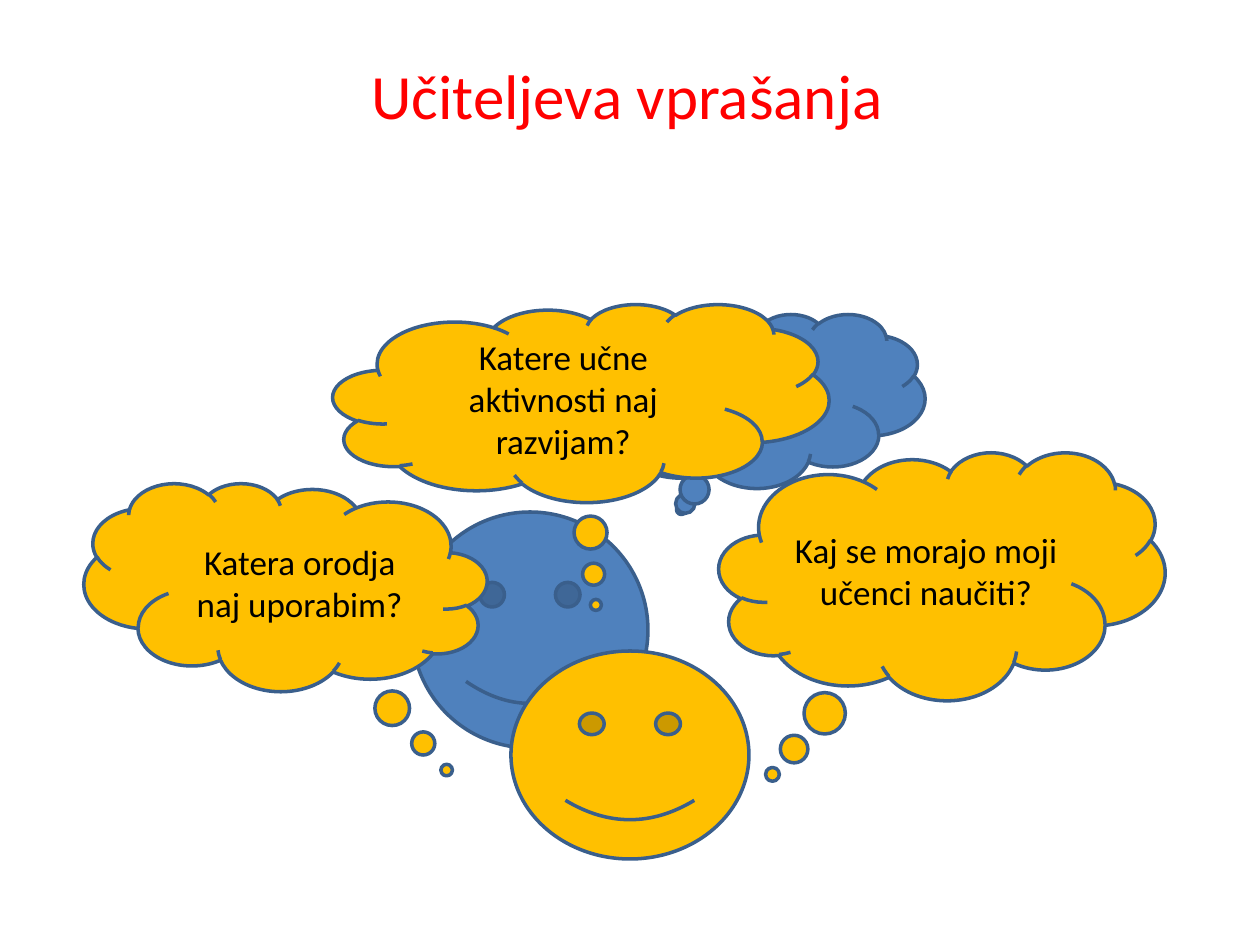
import dataclasses
import typing

import pptx
import pptx.dml.color
import pptx.enum.shapes
import pptx.enum.text
import pptx.util

EMU_PER_PX = 914400 / 126
FONT = "Calibri"
BLUE = "4F81BD"
OUTLINE = "3A5F8C"
YELLOW = "FFC000"
RED = "FF0000"
BLACK = "000000"
CLOUD = pptx.enum.shapes.MSO_SHAPE.CLOUD_CALLOUT
FACE = pptx.enum.shapes.MSO_SHAPE.SMILEY_FACE


@dataclasses.dataclass
class Figure:
    kind: typing.Any
    left: int
    top: int
    width: int
    height: int
    fill: str
    question: str = ""
    tail: tuple[float, ...] = ()
    mirrored: bool = False


FIGURES_BEHIND_TITLE = [
    Figure(CLOUD, 581, 314, 344, 174, BLUE),
    Figure(FACE, 412, 512, 236, 236, BLUE),
]
FIGURES_IN_FRONT = [
    Figure(FACE, 511, 651, 238, 208, YELLOW),
    Figure(CLOUD, 719, 452, 446, 248, YELLOW,
           "Kaj se morajo moji učenci naučiti?", (-0.38, 0.8)),
    Figure(CLOUD, 84, 483, 403, 208, YELLOW,
           "Katera orodja naj uporabim?", (-0.4, 0.88), True),
    Figure(CLOUD, 333, 304, 496, 198, YELLOW,
           "Katere učne aktivnosti naj razvijam?", (0.03, 1.02)),
]


def px(length: int) -> int:
    return round(length * EMU_PER_PX)


def colour(value: str) -> pptx.dml.color.RGBColor:
    return pptx.dml.color.RGBColor.from_string(value)


def write(frame: typing.Any, text: str, size: int, text_colour: str) -> None:
    frame.word_wrap = True
    frame.vertical_anchor = pptx.enum.text.MSO_ANCHOR.MIDDLE
    para = frame.paragraphs[0]
    para.alignment = pptx.enum.text.PP_ALIGN.CENTER
    span = para.add_run()
    span.text = text
    span.font.name = FONT
    span.font.size = pptx.util.Pt(size)
    span.font.color.rgb = colour(text_colour)


def draw_figure(page: typing.Any, figure: Figure) -> None:
    shape = page.shapes.add_shape(
        figure.kind, px(figure.left), px(figure.top), px(figure.width), px(figure.height))
    shape.shadow.inherit = False
    shape.fill.solid()
    shape.fill.fore_color.rgb = colour(figure.fill)
    shape.line.color.rgb = colour(OUTLINE)
    shape.line.width = pptx.util.Pt(2)
    for index, value in enumerate(figure.tail):
        shape.adjustments[index] = value
    if figure.mirrored:
        shape.element.spPr.xfrm.set("flipH", "1")
    if figure.question:
        write(shape.text_frame, figure.question, 20, BLACK)


def draw_title(page: typing.Any) -> None:
    box = page.shapes.add_textbox(px(60), px(15), px(1134), px(158))
    write(box.text_frame, "Učiteljeva vprašanja", 36, RED)


def main() -> None:
    deck = pptx.Presentation()
    deck.slide_width = px(1260)
    deck.slide_height = px(945)
    page = deck.slides.add_slide(deck.slide_layouts[6])
    for figure in FIGURES_BEHIND_TITLE:
        draw_figure(page, figure)
    draw_title(page)
    for figure in FIGURES_IN_FRONT:
        draw_figure(page, figure)
    deck.save("out.pptx")


if __name__ == "__main__":
    main()
